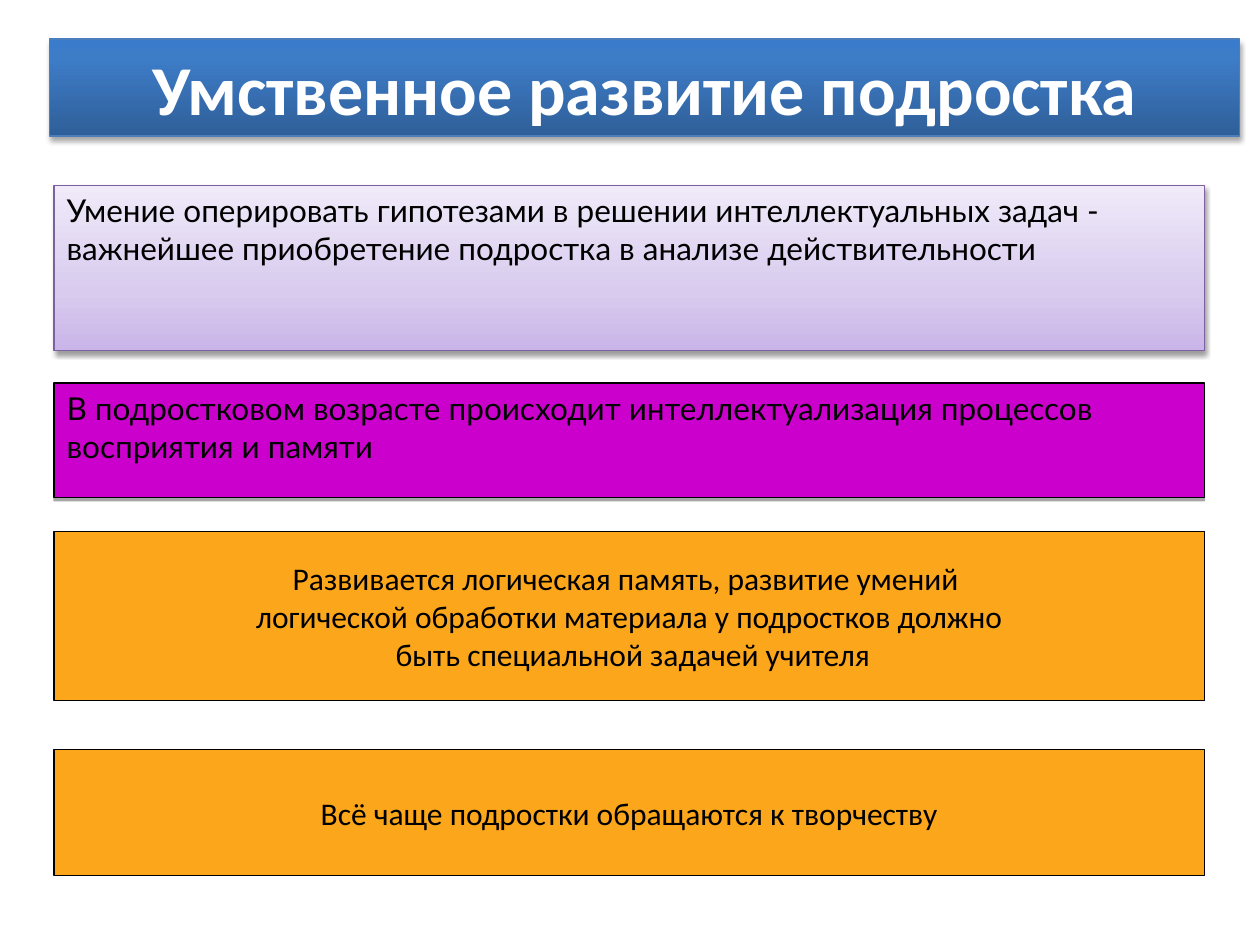
"""Build a slide on the mental development of teenagers."""
from lxml import etree
from pptx import Presentation
from pptx import util as u
from pptx.dml.color import RGBColor
from pptx.enum import shapes, text
from pptx.oxml.ns import qn

COLORS = {
    "white": "FFFFFF", "black": "000000", "blue": "4B7EBC",
    "violet": "7D60A0", "magenta": "CC00CC", "orange": "FBA61B",
}
BLUE_FADE = [(0, "2F5F99"), (80, "3D7CC7"), (100, "3A7CCB")]
VIOLET_FADE = [(0, "C9B5E8"), (35, "D8CBEE"), (100, "F0EAF9")]

TITLE = {
    "lines": ["Умственное развитие подростка"], "area": (0.39, 0.31, 9.45, 0.77),
    "fill": BLUE_FADE, "line": "blue", "shadow": (35, 3.1, 1.8),
    "font": "Calibri", "size": 40, "color": "white", "bold": True, "centered": True,
}
LEFT, WIDTH = 0.43, 9.13
BODY = {"line": "black", "shadow": None, "size": 18, "color": "black", "bold": False}
LEAD = BODY | {"font": "Lato", "centered": False}
NOTE = BODY | {"font": "Calibri", "centered": True, "fill": "orange"}
BOXES = [
    LEAD | {
        "lines": ["Умение оперировать гипотезами в решении интеллектуальных задач - "
                  "важнейшее приобретение подростка в анализе действительности"],
        "area": (LEFT, 1.47, WIDTH, 1.31),
        "fill": VIOLET_FADE, "line": "violet", "shadow": (38, 3.1, 1.6),
    },
    LEAD | {
        "lines": ["В подростковом возрасте происходит интеллектуализация "
                  "процессов восприятия и памяти"],
        "area": (LEFT, 3.04, WIDTH, 0.91),
        "fill": "magenta", "shadow": (35, 0, 1.8),
    },
    NOTE | {
        "lines": ["Развивается логическая память, развитие умений ",
                  "логической обработки материала у подростков должно",
                  " быть специальной задачей учителя"],
        "area": (LEFT, 4.22, WIDTH, 1.34),
    },
    NOTE | {
        "lines": ["Всё чаще подростки обращаются к творчеству"],
        "area": (LEFT, 5.95, WIDTH, 1),
    },
]


def rgb(name):
    return RGBColor.from_string(COLORS[name])


def add_color(parent, value):
    return etree.SubElement(parent, qn("a:srgbClr"), val=value)


def paint(box, fill):
    if isinstance(fill, str):
        box.fill.solid()
        box.fill.fore_color.rgb = rgb(fill)
        return
    box.fill.gradient()
    box.fill.gradient_angle = 90
    stops = box.element.spPr.find(".//" + qn("a:gsLst"))
    for stop in list(stops):
        stops.remove(stop)
    for percent, value in fill:
        add_color(etree.SubElement(stops, qn("a:gs"), pos=str(percent * 1000)), value)


def cast_shadow(box, shadow):
    box.shadow.inherit = False
    if shadow:
        opacity, blur, distance = shadow
        effects = box.element.spPr.find(qn("a:effectLst"))
        outer = etree.SubElement(
            effects, qn("a:outerShdw"), blurRad=str(u.Pt(blur)),
            dist=str(u.Pt(distance)), dir="5400000", rotWithShape="0")
        color = add_color(outer, COLORS["black"])
        etree.SubElement(color, qn("a:alpha"), val=str(opacity * 1000))


def write(box, item):
    frame = box.text_frame
    frame.text = "\n".join(item["lines"])
    frame.auto_size = text.MSO_AUTO_SIZE.NONE
    frame.word_wrap = len(item["lines"]) == 1
    centered = item["centered"]
    frame.vertical_anchor = text.MSO_ANCHOR.MIDDLE if centered else text.MSO_ANCHOR.TOP
    for para in frame.paragraphs:
        para.alignment = text.PP_ALIGN.CENTER if centered else text.PP_ALIGN.LEFT
        para.font.name = item["font"]
        para.font.size = u.Pt(item["size"])
        para.font.bold = item["bold"]
        para.font.color.rgb = rgb(item["color"])


def style(box, item):
    box.left, box.top, box.width, box.height = map(u.Inches, item["area"])
    paint(box, item["fill"])
    box.line.color.rgb = rgb(item["line"])
    box.line.width = u.Pt(0.75)
    cast_shadow(box, item["shadow"])
    write(box, item)


def main():
    deck = Presentation()
    deck.slide_width, deck.slide_height = u.Inches(10), u.Inches(7.5)
    page = deck.slides.add_slide(deck.slide_layouts[5])
    style(page.shapes.title, TITLE)
    for item in BOXES:
        area = map(u.Inches, item["area"])
        style(page.shapes.add_shape(shapes.MSO_SHAPE.RECTANGLE, *area), item)
    deck.save("out.pptx")


if __name__ == "__main__":
    main()
